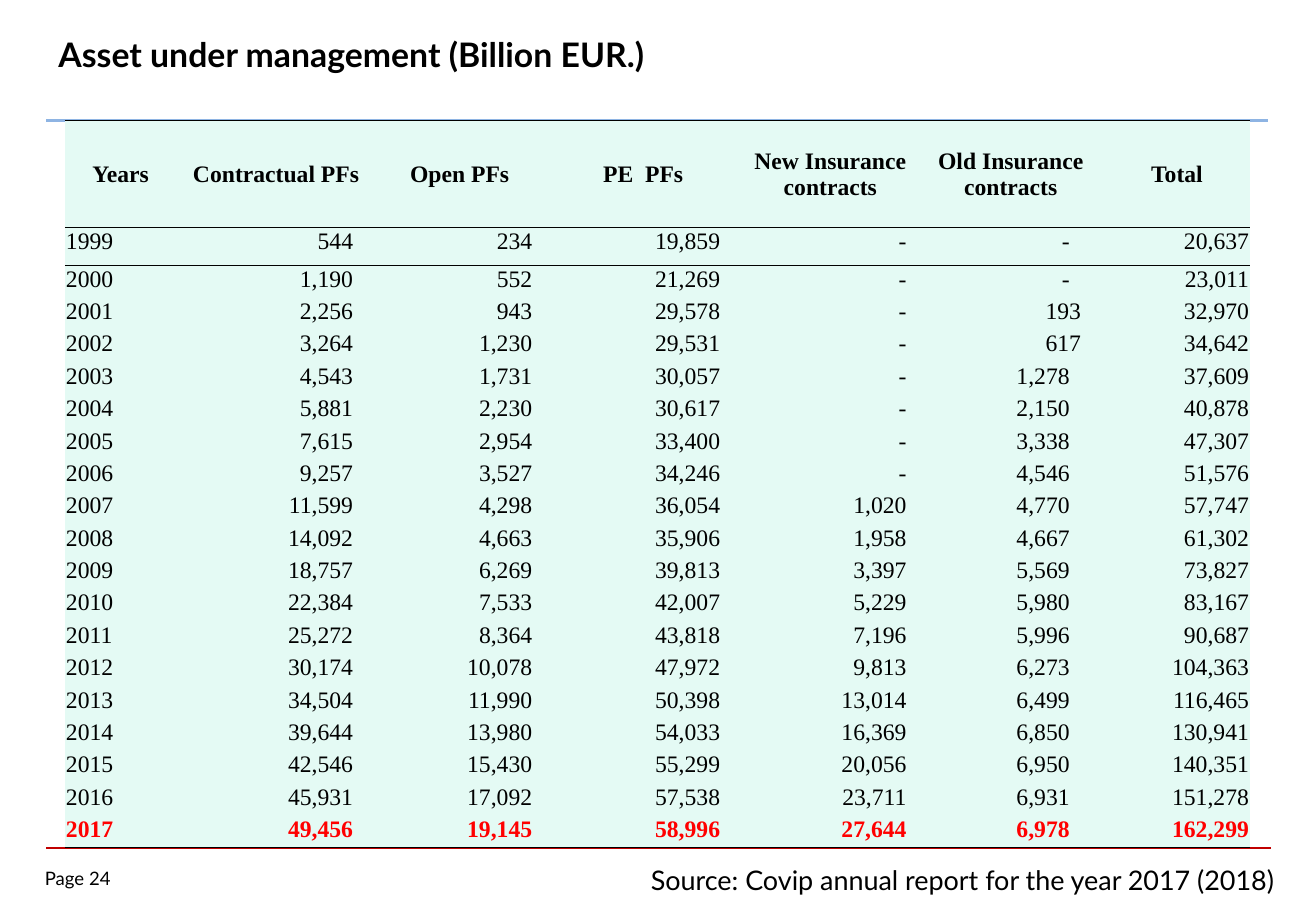
from dataclasses import dataclass

from lxml.etree import SubElement
from pptx import Presentation
from pptx.dml.color import RGBColor
from pptx.enum.shapes import MSO_CONNECTOR
from pptx.enum.text import MSO_ANCHOR, MSO_AUTO_SIZE, PP_ALIGN
from pptx.oxml import parse_xml
from pptx.oxml.ns import nsdecls, qn
from pptx.util import Pt


@dataclass(frozen=True)
class Theme:
    text: str = "000000"
    highlight: str = "FF0000"
    table_fill: str = "E4FAF4"
    top_rule: str = "8EB4E3"
    bottom_rule: str = "C00000"
    sans: str = "Lato"
    serif: str = "Times New Roman"
    title_size: float = 20
    source_size: float = 16
    table_size: float = 14
    page_size: float = 11


@dataclass(frozen=True)
class Box:
    left: float
    top: float
    width: float
    height: float

    def lengths(self):
        return Pt(self.left), Pt(self.top), Pt(self.width), Pt(self.height)


THEME = Theme()
NO_TABLE_STYLE = "{2D5ABB26-0587-4C30-8999-92F81FD0307C}"
COLUMN_WIDTHS = [66.2, 118.2, 99.4, 118.2, 103.7, 110.2, 86.8]
RIGHT_INSETS = [0.7, 13.5, 6.7, 13.5, 6.7, 20.2, 0.7]
OLD_CONTRACTS_COLUMN = 5
HEADER_HEIGHT, FIRST_HEIGHT, ROW_HEIGHT = 63.4, 22.3, 19.2
HEADERS = ["Years", "Contractual PFs", "Open PFs", "PE  PFs",
           "New Insurance contracts", "Old Insurance contracts", "Total"]
ASSETS = """
1999 544 234 19,859 - - 20,637
2000 1,190 552 21,269 - - 23,011
2001 2,256 943 29,578 - 193 32,970
2002 3,264 1,230 29,531 - 617 34,642
2003 4,543 1,731 30,057 - 1,278 37,609
2004 5,881 2,230 30,617 - 2,150 40,878
2005 7,615 2,954 33,400 - 3,338 47,307
2006 9,257 3,527 34,246 - 4,546 51,576
2007 11,599 4,298 36,054 1,020 4,770 57,747
2008 14,092 4,663 35,906 1,958 4,667 61,302
2009 18,757 6,269 39,813 3,397 5,569 73,827
2010 22,384 7,533 42,007 5,229 5,980 83,167
2011 25,272 8,364 43,818 7,196 5,996 90,687
2012 30,174 10,078 47,972 9,813 6,273 104,363
2013 34,504 11,990 50,398 13,014 6,499 116,465
2014 39,644 13,980 54,033 16,369 6,850 130,941
2015 42,546 15,430 55,299 20,056 6,950 140,351
2016 45,931 17,092 57,538 23,711 6,931 151,278
2017 49,456 19,145 58,996 27,644 6,978 162,299
"""


def add_text(para, text, size, font, color=THEME.text, bold=False):
    span = para.add_run()
    span.text = text
    span.font.size = Pt(size)
    span.font.name = font
    span.font.bold = bold
    span.font.color.rgb = RGBColor.from_string(color)


def add_rule(slide, box, color, width):
    left, top, length, _ = box.lengths()
    rule = slide.shapes.add_connector(
        MSO_CONNECTOR.STRAIGHT, left, top, left + length, top)
    rule.line.color.rgb = RGBColor.from_string(color)
    rule.line.width = Pt(width)
    SubElement(rule._element.spPr, qn("a:effectLst"))


def fill_title(slide, box):
    title = slide.shapes.title
    title.left, title.top, title.width, title.height = box.lengths()
    frame = title.text_frame
    frame.auto_size = MSO_AUTO_SIZE.NONE
    frame.vertical_anchor = MSO_ANCHOR.MIDDLE
    para = frame.paragraphs[0]
    para.alignment = PP_ALIGN.LEFT
    add_text(para, "Asset under management (Billion EUR.)",
             THEME.title_size, THEME.sans, bold=True)


def add_label(slide, box, text, size, inset_x, inset_y):
    frame = slide.shapes.add_textbox(*box.lengths()).text_frame
    frame.word_wrap = True
    frame.margin_left = frame.margin_right = Pt(inset_x)
    frame.margin_top = frame.margin_bottom = Pt(inset_y)
    add_text(frame.paragraphs[0], text, size, THEME.sans)


def add_borders(cell, sides):
    properties = cell._tc.get_or_add_tcPr()
    for index, side in enumerate(sides):
        properties.insert(index, parse_xml(
            f'<a:ln{side} {nsdecls("a")} w="6350"><a:solidFill>'
            f'<a:srgbClr val="{THEME.text}"/></a:solidFill></a:ln{side}>'))


def fill_cell(cell, text, row, column, last_row):
    is_header, is_last = row == 0, row == last_row
    cell.fill.solid()
    cell.fill.fore_color.rgb = RGBColor.from_string(THEME.table_fill)
    cell.margin_left = cell.margin_top = Pt(0.7)
    cell.margin_bottom = 0
    inset_column = column
    if column == OLD_CONTRACTS_COLUMN and text.isdigit():
        inset_column = 1
    cell.margin_right = Pt(0.7 if is_header else RIGHT_INSETS[inset_column])
    cell.vertical_anchor = MSO_ANCHOR.MIDDLE if is_header else MSO_ANCHOR.TOP
    para = cell.text_frame.paragraphs[0]
    if is_header:
        para.alignment = PP_ALIGN.CENTER
    else:
        para.alignment = PP_ALIGN.RIGHT if column else PP_ALIGN.LEFT
    add_text(para, text, THEME.table_size, THEME.serif,
             THEME.highlight if is_last else THEME.text, is_header or is_last)
    top = "T" if row <= 1 else ""
    bottom = "B" if is_header or is_last else ""
    add_borders(cell, top + bottom)


def add_asset_table(slide, box):
    rows = [HEADERS] + [line.split() for line in ASSETS.strip().splitlines()]
    table = slide.shapes.add_table(
        len(rows), len(HEADERS), *box.lengths()).table
    table.first_row = table.horz_banding = False
    table._tbl.tblPr.find(qn("a:tableStyleId")).text = NO_TABLE_STYLE
    for column, width in zip(table.columns, COLUMN_WIDTHS):
        column.width = Pt(width)
    heights = [HEADER_HEIGHT, FIRST_HEIGHT] + [ROW_HEIGHT] * (len(rows) - 2)
    for row, values in enumerate(rows):
        table.rows[row].height = Pt(heights[row])
        for column, text in enumerate(values):
            fill_cell(table.cell(row, column), text, row, column, len(rows) - 1)


def add_footer(slide, box):
    add_label(slide, Box(box.left, box.top + 5.8, 52.6, 15.8), "Page 24",
              THEME.page_size, 0, 0)
    source_left = box.left + 352.1
    add_label(slide, Box(source_left, box.top, box.width - 352.1, box.height),
              "Source: Covip annual report for the year 2017 (2018)",
              THEME.source_size, 7.2, 3.6)


def build_asset_slide(deck):
    slide = deck.slides.add_slide(deck.slide_layouts[5])
    # Title
    fill_title(slide, Box(27.4, 6.5, 741.6, 51.1))
    # Rules above and below the table
    add_rule(slide, Box(27.4, 502.6, 725.8, 0), THEME.bottom_rule, 1)
    add_rule(slide, Box(27.4, 71.4, 724.3, 0), THEME.top_rule, 1.5)
    # Assets by year
    add_asset_table(slide, Box(38.4, 71.4, 702.7, 431.3))
    # Page number and source
    add_footer(slide, Box(26.6, 508.3, 752.4, 26.6))


def main():
    deck = Presentation()
    deck.slide_width, deck.slide_height = Pt(780), Pt(540)
    build_asset_slide(deck)
    deck.save("out.pptx")


if __name__ == "__main__":
    main()
